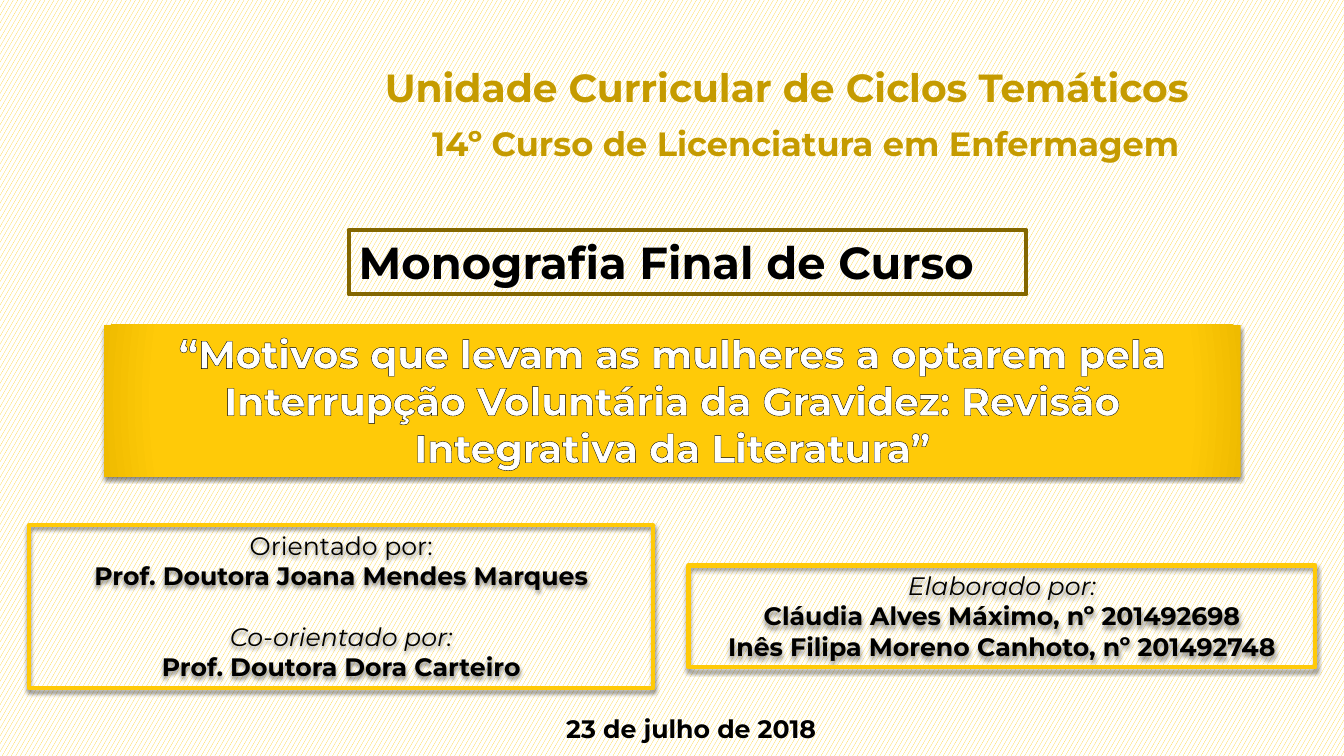
from lxml import etree
from pptx import Presentation
from pptx.dml.color import RGBColor
from pptx.enum.dml import MSO_PATTERN_TYPE as Pattern
from pptx.enum.shapes import MSO_SHAPE as Shape
from pptx.enum.text import MSO_ANCHOR as Anchor, MSO_AUTO_SIZE as AutoSize, PP_ALIGN as Align
from pptx.oxml import parse_xml
from pptx.oxml.ns import nsdecls, qn
from pptx.util import Pt

GOLD = RGBColor(0xFF, 0xCA, 0x08)
DEEP_GOLD = RGBColor(0xEF, 0xBB, 0x00)
OCHRE = RGBColor(0xC5, 0x9B, 0x00)
BRONZE = RGBColor(0x84, 0x67, 0x00)
BLACK = RGBColor(0, 0, 0)
WHITE = RGBColor(255, 255, 255)


class Cover:
    """Style and current page of the cover."""
    font = "Montserrat"

    def __init__(self, page):
        self.page = page

    def background(self):
        fill = self.page.background.fill
        fill.patterned()
        fill.pattern = Pattern.LARGE_CONFETTI
        fill.fore_color.rgb = GOLD
        fill.back_color.rgb = WHITE

    def span(self, para, text, size, color, bold=False, italic=False, outline=None, width=0.52):
        run = para.add_run()
        run.text = text
        run.font.name, run.font.size = self.font, Pt(size)
        run.font.bold, run.font.italic = bold, italic
        run.font.color.rgb = color
        if outline is not None:
            run.font._element.insert(0, parse_xml(
                f'<a:ln {nsdecls("a")} w="{Pt(width)}"><a:solidFill>'
                f'<a:srgbClr val="{outline}"/></a:solidFill></a:ln>'))

    def prepare(self, shape):
        frame = shape.text_frame
        frame.word_wrap = True
        frame.auto_size = AutoSize.SHAPE_TO_FIT_TEXT
        frame.vertical_anchor = Anchor.TOP
        return frame

    def label(self, area, text, size, color):
        box = self.page.shapes.add_textbox(*map(Pt, area))
        para = self.prepare(box).paragraphs[0]
        self.span(para, text, size, color, bold=True, outline=BLACK)

    def panel(self, area, line=None, shadow=True):
        box = self.page.shapes.add_shape(Shape.RECTANGLE, *map(Pt, area))
        box.shadow.inherit = False
        box.fill.background()
        if line is None:
            box.line.fill.background()
        else:
            box.line.color.rgb = line
            box.line.width = Pt(3)
        if shadow:
            effects = box._element.spPr.find(qn("a:effectLst"))
            effects.append(parse_xml(
                f'<a:outerShdw {nsdecls("a")} blurRad="{Pt(3)}" dist="{Pt(2)}" dir="5400000" '
                f'rotWithShape="0"><a:srgbClr val="{BLACK}"><a:alpha val="45000"/>'
                '</a:srgbClr></a:outerShdw>'))
        self.prepare(box)
        return box

    def title(self, box, text, size, color, outline, align):
        para = box.text_frame.paragraphs[0]
        para.alignment = align
        self.span(para, text, size, color, bold=True, outline=outline)

    def glow(self, box):
        properties = box._element.spPr
        gradient = parse_xml(f'<a:gradFill {nsdecls("a")} rotWithShape="1"><a:gsLst/></a:gradFill>')
        for place, color in ((0, GOLD), (90, GOLD), (100, DEEP_GOLD)):
            stop = etree.SubElement(gradient[0], qn("a:gs"), pos=str(place * 1000))
            etree.SubElement(stop, qn("a:srgbClr"), val=str(color))
        centre = etree.SubElement(gradient, qn("a:path"), path="circle")
        etree.SubElement(centre, qn("a:fillToRect"), dict.fromkeys("ltrb", "100000"))
        properties.replace(properties.find(qn("a:noFill")), gradient)

    def credits(self, area, lines):
        """Each line is its text, its style and the space before it."""
        frame = self.panel(area, GOLD).text_frame
        for index, (text, style, gap) in enumerate(lines):
            para = frame.add_paragraph() if index else frame.paragraphs[0]
            para.alignment = Align.CENTER
            if gap:
                para.space_before = Pt(gap)
            self.span(para, text, 18, BLACK, **style)


def main():
    deck = Presentation()
    deck.slide_width, deck.slide_height = Pt(960), Pt(540)
    cover = Cover(deck.slides.add_slide(deck.slide_layouts[6]))
    cover.background()

    # Course headings
    cover.label((267.8, 41.8, 627, 41), "Unidade Curricular de Ciclos Temáticos", 28, OCHRE)
    cover.label((301.7, 84.2, 584, 36), "14º Curso de Licenciatura em Enfermagem", 24, OCHRE)

    # Kind of work and its title
    kind = cover.panel((249.1, 164.2, 484, 46), BRONZE, shadow=False)
    cover.title(kind, "Monografia Final de Curso", 32, BLACK, WHITE, Align.LEFT)
    banner = cover.panel((74.2, 231.8, 812, 108.7))
    cover.glow(banner)
    cover.title(banner, "“Motivos que levam as mulheres a optarem pela Interrupção Voluntária "
                "da Gravidez: Revisão Integrativa da Literatura”", 28, WHITE, BLACK, Align.CENTER)

    # Authors and supervisors
    role = {"italic": True}
    person = {"bold": True, "outline": WHITE, "width": 0.75}
    cover.credits((491.8, 403.9, 447.8, 72.7), [
        ("Elaborado por:", role, 0),
        ("Cláudia Alves Máximo, nº 201492698", person, 0),
        ("Inês Filipa Moreno Canhoto, nº 201492748", person, 0)])
    cover.credits((20.9, 375.1, 445.7, 116.6), [
        ("Orientado por:", {}, 0),
        ("Prof. Doutora Joana Mendes Marques", person, 0),
        ("Co-orientado por:", role, 21.6),
        ("Prof. Doutora Dora Carteiro", person, 0)])

    # Date
    cover.label((397.4, 506.2, 213, 29), "23 de julho de 2018", 18, BLACK)
    deck.save("out.pptx")


if __name__ == "__main__":
    main()
